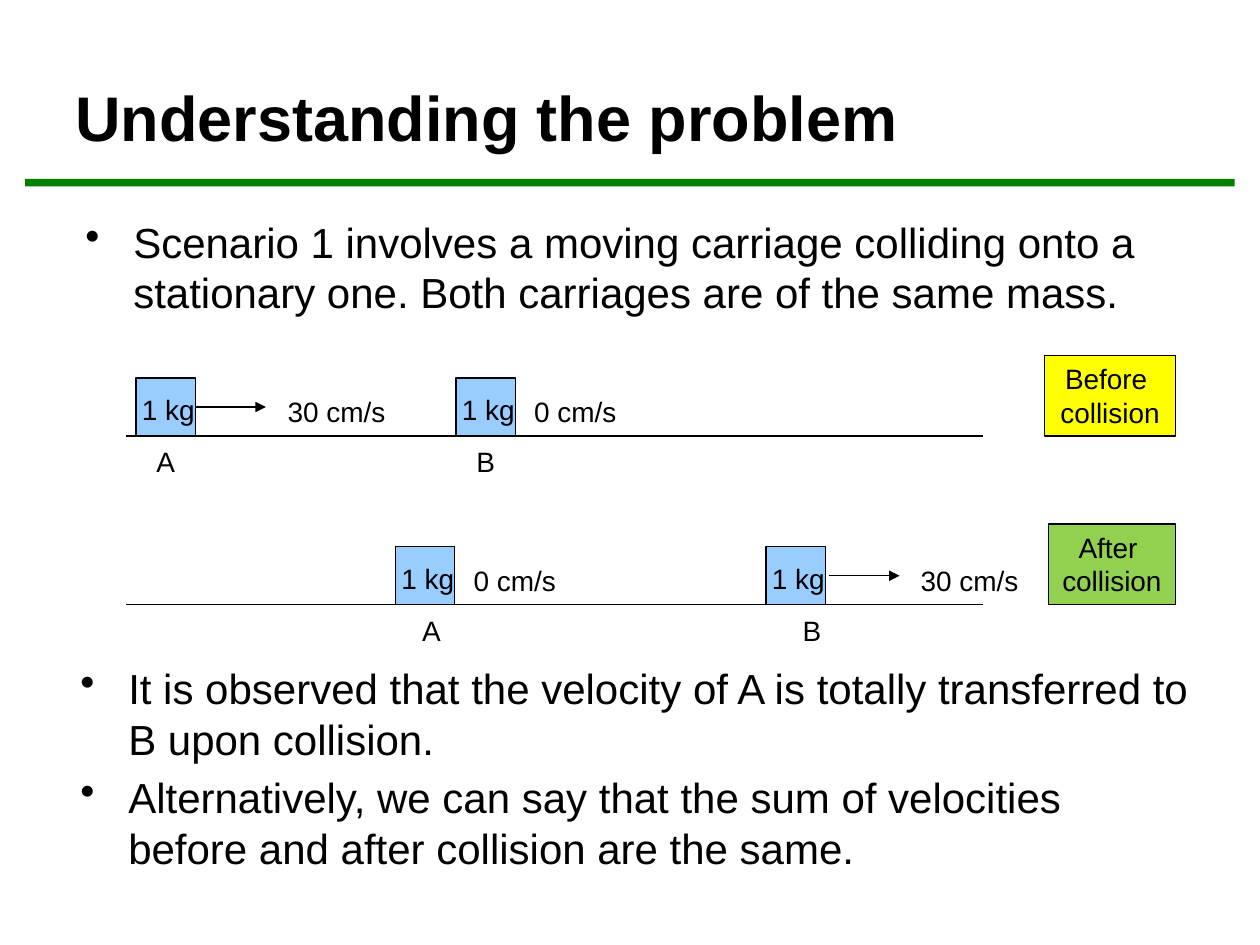
from lxml.etree import SubElement
from pptx import Presentation
from pptx.dml.color import RGBColor
from pptx.enum.shapes import MSO_CONNECTOR as CONN, MSO_SHAPE as SHAPE
from pptx.enum.text import MSO_ANCHOR as ANCHOR, PP_ALIGN as ALIGN
from pptx.oxml.ns import qn
from pptx.util import Inches, Pt

BLACK = RGBColor(0x00, 0x00, 0x00)
GREEN = RGBColor(0x00, 0x80, 0x00)
BLUE = RGBColor(0x99, 0xCC, 0xFF)
YELLOW = RGBColor(0xFF, 0xFF, 0x00)
LIME = RGBColor(0x92, 0xD0, 0x50)
FONT = "Arial"

TITLE = "Understanding the problem"
INTRO = ["Scenario 1 involves a moving carriage colliding onto a stationary one. "
         "Both carriages are of the same mass."]
FINDINGS = ["It is observed that the velocity of A is totally transferred to B upon collision.",
            "Alternatively, we can say that the sum of velocities before and after "
            "collision are the same."]

MASS = "1 kg"
TRACK_LEFT, TRACK_RIGHT = 1, 7.8
CART_W, CART_H = 0.47, 0.46
ARROW = 0.56
CAPTION_RIGHT, CAPTION_H = 9.33, 0.64

# Carriages: name, left, name's left, speed, speed's left and width, gap to arrow (None: at rest)
SCENES = [
    dict(track=3.46, caption=["Before ", "collision"], fill=YELLOW, width=1.04, carts=[
        ("A", 1.08, 1.13, "30 cm/s", 2.04, 1.26, 0),
        ("B", 3.62, 3.67, "0 cm/s", 4.12, 0.89, None)]),
    dict(track=4.8, caption=["After ", "collision"], fill=LIME, width=1.01, carts=[
        ("A", 3.14, 3.24, "0 cm/s", 3.64, 0.89, None),
        ("B", 6.08, 6.26, "30 cm/s", 7.05, 1.29, 0.03)]),
]

prs = Presentation()
prs.slide_width, prs.slide_height = Inches(10), Inches(7.5)
s = prs.slides.add_slide(prs.slide_layouts[6])


def write(sp, lines, size=16, align=ALIGN.CENTER, anchor=ANCHOR.TOP, bold=False,
          wrap=False, bullets=False):
    tf = sp.text_frame
    tf.word_wrap = wrap
    tf.vertical_anchor = anchor
    for i, line in enumerate(lines):
        p = tf.paragraphs[0] if i == 0 else tf.add_paragraph()
        p.alignment = align
        if bullets:
            pPr = p._p.get_or_add_pPr()
            pPr.set("marL", str(Inches(0.38)))
            pPr.set("indent", str(-Inches(0.38)))
            SubElement(pPr, qn("a:buChar")).set("char", "•")
            if i:
                p.space_before = Pt(size * 0.2)
        r = p.add_run()
        r.text = line
        r.font.name, r.font.size, r.font.bold = FONT, Pt(size), bold
        r.font.color.rgb = BLACK


def text(x, y, w, h, lines, **style):
    write(s.shapes.add_textbox(*map(Inches, (x, y, w, h))), lines, **style)


def rect(x, y, w, h, fill, outlined=True):
    sp = s.shapes.add_shape(SHAPE.RECTANGLE, *map(Inches, (x, y, w, h)))
    sp.shadow.inherit = False
    sp.fill.solid()
    sp.fill.fore_color.rgb = fill
    if outlined:
        sp.line.color.rgb, sp.line.width = BLACK, Pt(0.75)
    else:
        sp.line.fill.background()
    return sp


def level_line(x1, x2, y, arrow=False):
    c = s.shapes.add_connector(CONN.STRAIGHT, *map(Inches, (x1, y, x2, y)))
    c.line.color.rgb, c.line.width = BLACK, Pt(0.75)
    if arrow:
        SubElement(c.line._get_or_add_ln(), qn("a:tailEnd")).set("type", "triangle")
    SubElement(c._element.spPr, qn("a:effectLst"))
    return c


def draw_cart(track, name, x, name_x, speed, speed_x, speed_w, gap):
    cart = rect(x, track - CART_H, CART_W, CART_H, BLUE)
    text(x - 0.06, track - 0.39, 0.63, 0.3, [MASS])
    text(name_x, track + 0.02, 0.37, 0.44, [name])
    text(speed_x, track - 0.38, speed_w, 0.38, [speed])
    if gap is not None:
        start = x + CART_W + gap
        arrow = level_line(start, start + ARROW, track - CART_H / 2, arrow=True)
        if gap == 0:
            arrow.begin_connect(cart, 3)


rect(0.2, 1.42, 9.6, 0.06, GREEN, outlined=False)
text(0.5, 0.3, 9, 1.25, [TITLE], size=36, align=ALIGN.LEFT, anchor=ANCHOR.MIDDLE,
     bold=True, wrap=True)
for x, y, h, lines in [(0.58, 1.67, 1.04, INTRO), (0.54, 5.21, 1.83, FINDINGS)]:
    text(x, y, 9, h, lines, size=24, align=ALIGN.LEFT, wrap=True, bullets=True)

for scene in SCENES:
    track, width = scene["track"], scene["width"]
    level_line(TRACK_LEFT, TRACK_RIGHT, track)
    caption = rect(CAPTION_RIGHT - width, track - CAPTION_H, width, CAPTION_H, scene["fill"])
    write(caption, scene["caption"])
    for cart in scene["carts"]:
        draw_cart(track, *cart)

prs.save("out.pptx")
